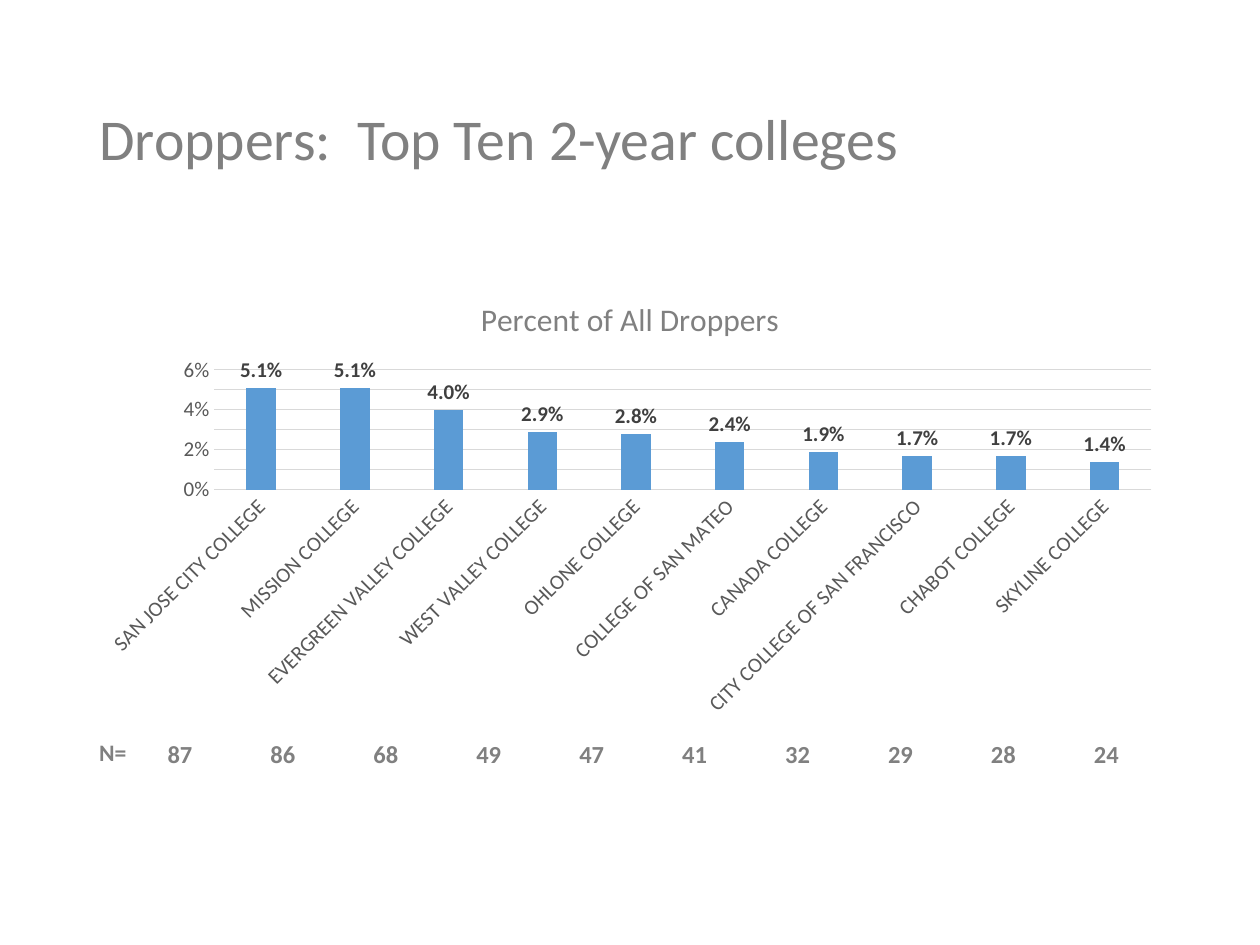
from pptx import Presentation
from pptx.chart.data import CategoryChartData
from pptx.dml.color import RGBColor
from pptx.enum.chart import XL_CHART_TYPE as ChartType
from pptx.enum.chart import XL_LABEL_POSITION as LabelPosition
from pptx.enum.chart import XL_TICK_MARK as TickMark
from pptx.enum.text import MSO_ANCHOR as Anchor
from pptx.enum.text import MSO_AUTO_SIZE as AutoSize
from pptx.enum.text import PP_ALIGN as Align
from pptx.util import Cm, Pt

GREY = RGBColor(0x80, 0x80, 0x80)
AXIS_GREY = RGBColor(0x59, 0x59, 0x59)
LABEL_GREY = RGBColor(0x40, 0x40, 0x40)
GRID_GREY = RGBColor(0xD9, 0xD9, 0xD9)
BLUE = RGBColor(0x5B, 0x9B, 0xD5)
WHITE = RGBColor(0xFF, 0xFF, 0xFF)

# College, share of all droppers, number of droppers
COLLEGES = [
    ("SAN JOSE CITY COLLEGE", 0.051, 87),
    ("MISSION COLLEGE", 0.051, 86),
    ("EVERGREEN VALLEY COLLEGE", 0.040, 68),
    ("WEST VALLEY COLLEGE", 0.029, 49),
    ("OHLONE COLLEGE", 0.028, 47),
    ("COLLEGE OF SAN MATEO", 0.024, 41),
    ("CANADA COLLEGE", 0.019, 32),
    ("CITY COLLEGE OF SAN FRANCISCO", 0.017, 29),
    ("CHABOT COLLEGE", 0.017, 28),
    ("SKYLINE COLLEGE", 0.014, 24),
]


class SlideBuilder:
    def __init__(self, page, font_name="Calibri"):
        self.page = page
        self.font_name = font_name

    def style(self, font, size, color, bold=False):
        font.name = self.font_name
        font.size = Pt(size)
        font.color.rgb = color
        font.bold = bold

    def add_span(self, para, text, size, color=GREY, bold=False):
        span = para.add_run()
        span.text = text
        self.style(span.font, size, color, bold)

    def title(self, text, left, top, width, height):
        box = self.page.shapes.title
        box.left, box.top, box.width, box.height = left, top, width, height
        frame = box.text_frame
        frame.auto_size = AutoSize.NONE
        frame.vertical_anchor = Anchor.MIDDLE
        para = frame.paragraphs[0]
        para.alignment = Align.LEFT
        para.line_spacing = 0.9
        self.add_span(para, text, 33)

    def text(self, text, left, top, width, height, size):
        frame = self.page.shapes.add_textbox(left, top, width, height).text_frame
        frame.word_wrap = True
        frame.auto_size = AutoSize.SHAPE_TO_FIT_TEXT
        self.add_span(frame.paragraphs[0], text, size, bold=True)

    def column_chart(self, heading, names, shares, left, top, width, height):
        data = CategoryChartData(number_format="0.0%")
        data.categories = names
        data.add_series("Series 1", shares)
        chart = self.page.shapes.add_chart(
            ChartType.COLUMN_CLUSTERED, left, top, width, height, data).chart
        chart.has_legend = False
        chart.font.name = self.font_name
        chart.font.size = Pt(10)
        chart.has_title = True
        self.add_span(chart.chart_title.text_frame.paragraphs[0], heading, 18)

        # Columns and their labels
        plot = chart.plots[0]
        plot.gap_width, plot.overlap = 219, -27
        plot.vary_by_categories = False
        fill = plot.series[0].format.fill
        fill.solid()
        fill.fore_color.rgb = BLUE
        plot.has_data_labels = True
        labels = plot.data_labels
        labels.show_value = True
        labels.position = LabelPosition.OUTSIDE_END
        labels.number_format = "0.0%"
        labels.number_format_is_linked = False
        self.style(labels.font, 12, LABEL_GREY, bold=True)

        # Axes
        for axis in (chart.category_axis, chart.value_axis):
            axis.major_tick_mark = axis.minor_tick_mark = TickMark.NONE
            self.style(axis.tick_labels.font, 12, AXIS_GREY)
        names_axis, share_axis = chart.category_axis, chart.value_axis
        share_axis.minimum_scale, share_axis.maximum_scale = 0, 0.06
        share_axis.major_unit = 0.01
        share_axis.tick_labels.number_format = "0%"
        share_axis.tick_labels.number_format_is_linked = False
        share_axis.format.line.fill.background()
        for line in (names_axis.format.line, share_axis.major_gridlines.format.line):
            line.color.rgb = GRID_GREY
            line.width = Pt(0.75)
        # Slanted college names, in 60000ths of a degree
        names_axis._element.txPr.bodyPr.set("rot", str(-45 * 60000))

    def number_row(self, numbers, left, top, width, height):
        table = self.page.shapes.add_table(
            1, len(numbers), left, top, width, height).table
        for cell, number in zip(table.rows[0].cells, numbers):
            cell.fill.solid()
            cell.fill.fore_color.rgb = WHITE
            cell.vertical_anchor = Anchor.MIDDLE
            cell.margin_left = cell.margin_right = cell.margin_top = Cm(0.03)
            cell.margin_bottom = 0
            para = cell.text_frame.paragraphs[0]
            para.alignment = Align.CENTER
            self.add_span(para, str(number), 14, bold=True)


def main():
    deck = Presentation()
    deck.slide_width, deck.slide_height = Cm(25.4), Cm(19.05)
    title_only = deck.slide_layouts[5]
    builder = SlideBuilder(deck.slides.add_slide(title_only))
    names, shares, counts = zip(*COLLEGES)
    left, width = Cm(1.75), Cm(21.9)

    # Heading
    builder.title("Droppers:  Top Ten 2-year colleges", left, Cm(1.02), width, Cm(3.68))

    # Share per college
    builder.column_chart("Percent of All Droppers", names, shares,
                         left, Cm(5.56), width, Cm(9.07))

    # Number of droppers under each column
    builder.number_row(counts, Cm(2.59), Cm(14.86), Cm(20.75), Cm(0.69))
    builder.text("N=", left, Cm(14.76), Cm(2.03), Cm(0.84), 13.5)

    deck.save("out.pptx")


if __name__ == "__main__":
    main()
